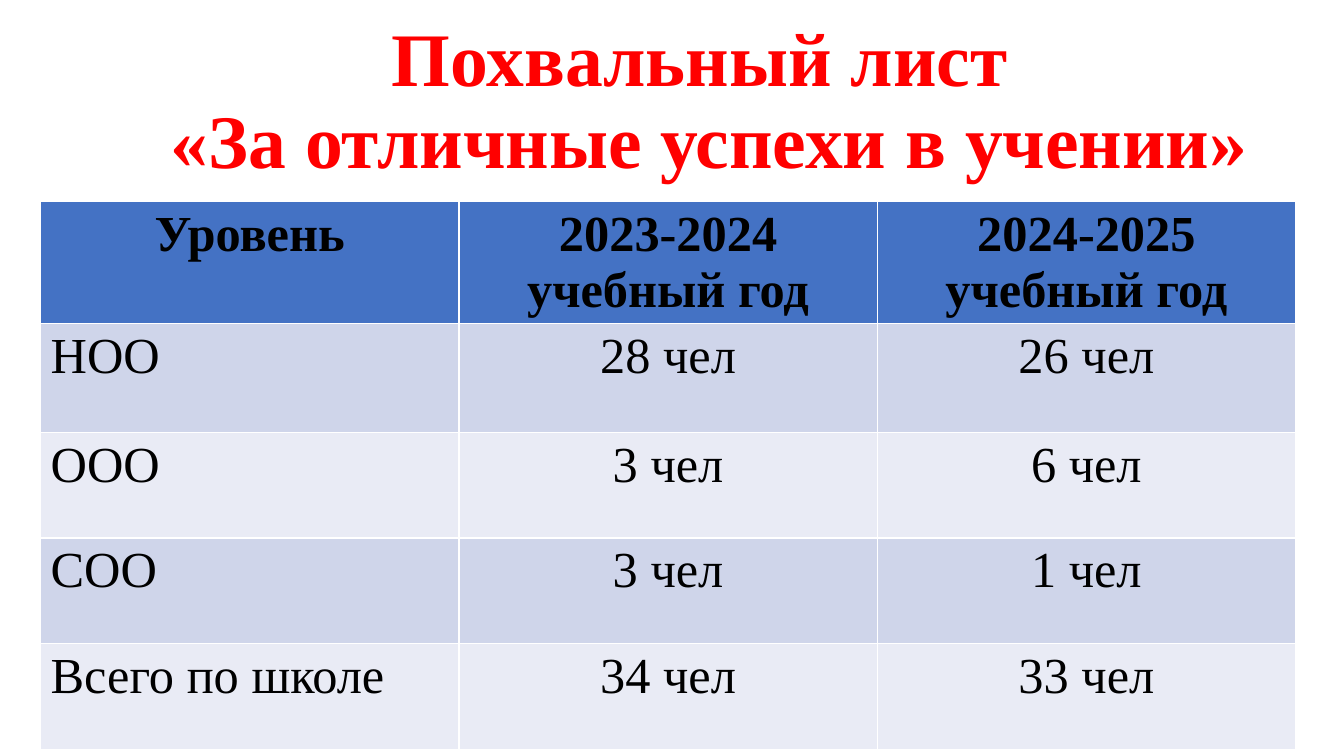
from pptx import Presentation
from pptx.dml.color import RGBColor
from pptx.enum.text import MSO_ANCHOR, MSO_AUTO_SIZE, PP_ALIGN
from pptx.util import Pt

COLORS = {
    "title": "FF0000",
    "text": "000000",
    "header": "4472C4",
    "odd": "CFD5EA",
    "even": "E9EBF5",
}
FONT = "Times New Roman"
TITLE = "Похвальный лист \v«За отличные успехи в учении»"
ROWS = [
    ["Уровень", "2023-2024 учебный год", "2024-2025 учебный год"],
    ["НОО", "28 чел", "26 чел"],
    ["ООО", "3 чел", "6 чел"],
    ["СОО", "3 чел", "1 чел"],
    ["Всего по школе", "34 чел", "33 чел"],
]
ROW_HEIGHTS = [75.6, 77.8, 75.6, 75.6, 75.6]
COLUMN_WIDTH = 298.8


def set_values(target, values):
    for name, value in values.items():
        setattr(target, name, value)


def write_text(frame, text, size, color, bold, align):
    frame.text = text
    para = frame.paragraphs[0]
    para.alignment = align
    for span in para.runs:
        set_values(span.font, {"name": FONT, "size": Pt(size), "bold": bold})
        span.font.color.rgb = RGBColor.from_string(COLORS[color])


def add_title(page):
    box = page.shapes.title
    set_values(box, {"left": Pt(66), "top": Pt(28.8),
                     "width": Pt(881.3), "height": Pt(89.3)})
    frame = box.text_frame
    set_values(frame, {"word_wrap": True, "auto_size": MSO_AUTO_SIZE.NONE,
                       "vertical_anchor": MSO_ANCHOR.MIDDLE})
    write_text(frame, TITLE, 54, "title", True, PP_ALIGN.CENTER)
    frame.paragraphs[0].line_spacing = 0.9


def fill_cell(cell, text, row, column):
    is_header = row == 0
    fill = "header" if is_header else "odd" if row % 2 else "even"
    cell.fill.solid()
    cell.fill.fore_color.rgb = RGBColor.from_string(COLORS[fill])
    align = PP_ALIGN.CENTER if is_header or column else PP_ALIGN.LEFT
    write_text(cell.text_frame, text, 36, "text", is_header, align)


def add_awards_table(page):
    columns = len(ROWS[0])
    table = page.shapes.add_table(
        len(ROWS), columns, Pt(29), Pt(144),
        Pt(COLUMN_WIDTH * columns), Pt(sum(ROW_HEIGHTS))).table
    for column in table.columns:
        column.width = Pt(COLUMN_WIDTH)
    for row, (texts, height) in enumerate(zip(ROWS, ROW_HEIGHTS)):
        table.rows[row].height = Pt(height)
        for column, text in enumerate(texts):
            fill_cell(table.cell(row, column), text, row, column)


def main():
    deck = Presentation()
    set_values(deck, {"slide_width": Pt(960), "slide_height": Pt(540)})
    page = deck.slides.add_slide(deck.slide_layouts[5])
    add_title(page)
    add_awards_table(page)
    deck.save("out.pptx")


if __name__ == "__main__":
    main()
